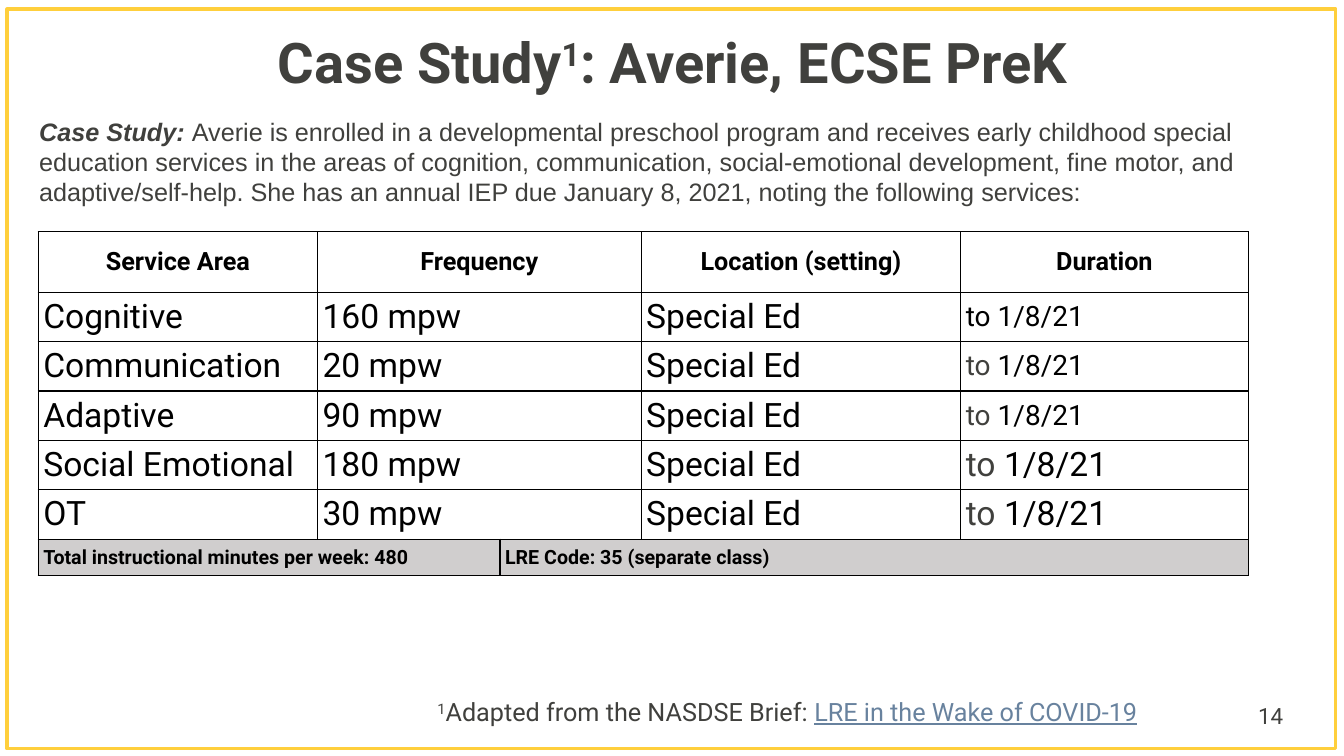
"""Build the case study slide with its table of weekly services."""
from lxml import etree
from pptx import Presentation
from pptx.dml.color import RGBColor
from pptx.enum import shapes, text
from pptx.oxml import ns
from pptx.util import Inches, Pt

COLORS = {"ink": "40403D", "black": "000000", "frame": "FFCF3C",
          "total": "D0CECE", "link": "68829E", "white": "FFFFFF"}


def write(paragraph, parts, size, color="ink", font="Roboto", bold=False):
    """Fill a paragraph with runs in one font and return the runs."""
    paragraph.font.name = font
    paragraph.font.size = Pt(size)
    paragraph.font.bold = bold
    paragraph.font.color.rgb = RGBColor.from_string(COLORS[color])
    runs = []
    for part in parts:
        run = paragraph.add_run()
        run.text = part
        runs.append(run)
    return runs


def add_box(left, top, width, height):
    """Add a wrapping text box and return its text frame."""
    frame = slide.shapes.add_textbox(Inches(left), Inches(top), Inches(width), Inches(height)).text_frame
    frame.word_wrap = True
    return frame


prs = Presentation()
prs.slide_width, prs.slide_height = Inches(13.33), Inches(7.5)
slide = prs.slides.add_slide(prs.slide_layouts[5])
slide.background.fill.solid()
slide.background.fill.fore_color.rgb = RGBColor.from_string(COLORS["white"])

border = slide.shapes.add_shape(shapes.MSO_SHAPE.RECTANGLE, Inches(0.07), Inches(0.09),
                                Inches(13.18), Inches(7.34))
border.shadow.inherit = False
border.fill.background()
border.line.color.rgb = RGBColor.from_string(COLORS["frame"])
border.line.width = Pt(2.25)

title = slide.shapes.title
title.left, title.top, title.width, title.height = Inches(0.92), Inches(0.28), Inches(11.5), Inches(0.73)
title.text_frame.auto_size = text.MSO_AUTO_SIZE.NONE
title.text_frame.vertical_anchor = text.MSO_ANCHOR.MIDDLE
heading = title.text_frame.paragraphs[0]
heading.alignment = text.PP_ALIGN.CENTER
heading.line_spacing = 0.9
heading_runs = write(heading, ["Case Study", "1", ": Averie, ECSE PreK"], 40, bold=True)

page_number = add_box(12.38, 6.9, 0.7, 0.4)
page_number.vertical_anchor = text.MSO_ANCHOR.MIDDLE
write(page_number.paragraphs[0], ["14"], 16)

intro = add_box(0.29, 1.1, 12.45, 1.1)
lead, _ = write(intro.paragraphs[0], [
    "Case Study: ",
    "Averie is enrolled in a developmental preschool program and receives early childhood special "
    "education services in the areas of cognition, communication, social-emotional development, "
    "fine motor, and adaptive/self-help. She has an annual IEP due January 8, 2021, noting the "
    "following services:"], 18, font="Arial")
lead.font.bold = lead.font.italic = True

services = [("Cognitive", "160 mpw", 20), ("Communication", "20 mpw", 20), ("Adaptive", "90 mpw", 20),
            ("Social Emotional", "180 mpw", 24), ("OT", "30 mpw", 24)]
column_widths = [2.77, 1.81, 1.4, 3.17, 2.85]
row_heights = [0.6] + [0.49] * len(services) + [0.36]
last_row = len(row_heights) - 1

table = slide.shapes.add_table(len(row_heights), len(column_widths), Inches(0.38), Inches(2.3),
                               Inches(sum(column_widths)), Inches(sum(row_heights))).table
table.first_row = table.horz_banding = False
for column, width in zip(table.columns, column_widths):
    column.width = Inches(width)
for row, height in zip(table.rows, row_heights):
    row.height = Inches(height)

for cell in table.iter_cells():
    cell.margin_left = cell.margin_right = Inches(0.05)
    cell.margin_top = cell.margin_bottom = 0
    cell.vertical_anchor = text.MSO_ANCHOR.MIDDLE
    properties = cell._tc.get_or_add_tcPr()
    for side in ("a:lnL", "a:lnR", "a:lnT", "a:lnB"):
        edge = etree.SubElement(properties, ns.qn(side), w=str(Pt(1)))
        edge_fill = etree.SubElement(edge, ns.qn("a:solidFill"))
        etree.SubElement(edge_fill, ns.qn("a:srgbClr"), val=COLORS["black"])
    cell.fill.background()

for row in range(last_row):
    table.cell(row, 1).merge(table.cell(row, 2))
table.cell(last_row, 0).merge(table.cell(last_row, 1))
table.cell(last_row, 2).merge(table.cell(last_row, 4))

for column, label in zip((0, 1, 3, 4), ("Service Area", "Frequency", "Location (setting)", "Duration")):
    header = table.cell(0, column).text_frame.paragraphs[0]
    header.alignment = text.PP_ALIGN.CENTER
    write(header, [label], 18, "black", bold=True)

for row, (area, frequency, duration_size) in enumerate(services, start=1):
    for column, value in zip((0, 1, 3), (area, frequency, "Special Ed")):
        write(table.cell(row, column).text_frame.paragraphs[0], [value], 24, "black")
    until, _ = write(table.cell(row, 4).text_frame.paragraphs[0], ["to ", "1/8/21"], duration_size, "black")
    if row > 1:
        until.font.color.rgb = RGBColor.from_string(COLORS["ink"])

for column, total in ((0, "Total instructional minutes per week: 480"), (2, "LRE Code: 35 (separate class)")):
    total_cell = table.cell(last_row, column)
    total_cell.fill.solid()
    total_cell.fill.fore_color.rgb = RGBColor.from_string(COLORS["total"])
    write(total_cell.text_frame.paragraphs[0], [total], 14, "black", bold=True)

footnote = add_box(4.24, 6.86, 7.46, 0.4)
mark, _, brief = write(footnote.paragraphs[0],
                       ["1", "Adapted from the NASDSE Brief: ", "LRE in the Wake of COVID-19"], 18)
brief.font.underline = True
brief.font.color.rgb = RGBColor.from_string(COLORS["link"])

for superscript in (heading_runs[1], mark):
    superscript.font._element.set("baseline", "30000")

prs.save("out.pptx")
